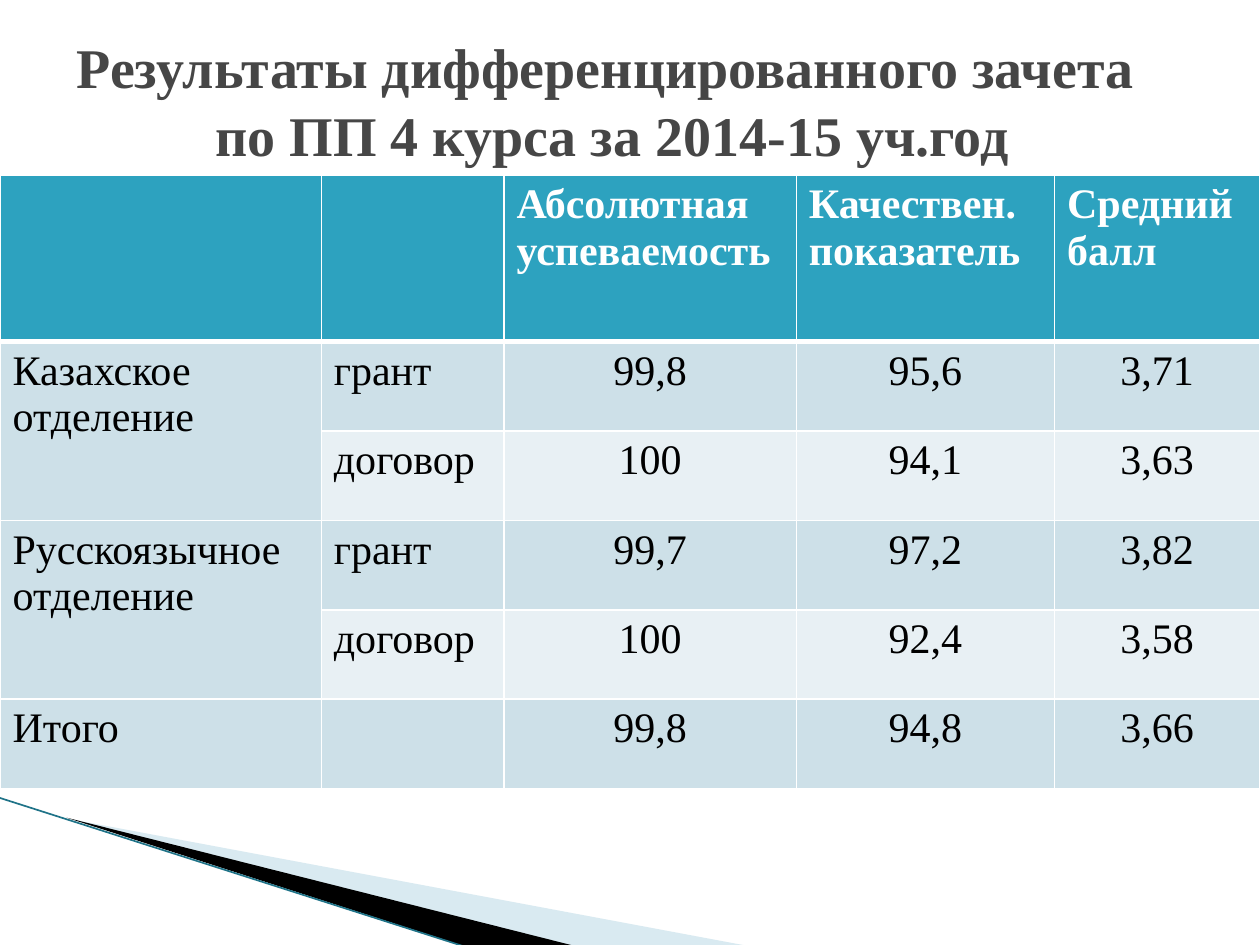
"""Build the slide with the results table of the graded fourth-year test."""
from lxml import etree
from pptx import Presentation
from pptx import util as u
from pptx.dml import color
from pptx.enum import text
from pptx.oxml import ns

FONT = "Times New Roman"
HEADER, DARK_BAND, LIGHT_BAND, WHITE = "2DA2BF", "CDE0E8", "E8F0F4", "FFFFFF"


def paint(target, value):
    """Give a fill a solid colour, or set a font's or a line's colour."""
    if hasattr(target, "solid"):
        target.solid()
        target = target.fore_color
    else:
        target = target.color
    target.rgb = color.RGBColor.from_string(value)


def add_child(parent, tag, **attributes):
    """Append a drawing element with the given attributes."""
    return etree.SubElement(parent, ns.qn(tag), attributes)


deck = Presentation()
deck.slide_width, deck.slide_height = u.Inches(10), u.Inches(7.5)
page = deck.slides.add_slide(deck.slide_layouts[5])
tree = page.shapes

wedges = [
    ("A0CBDC", 40, [(0.55, 6.5), (5.95, 7.51), (4.56, 7.51)]),
    ("000000", 100, [(0.53, 6.49), (4.57, 7.51), (3.72, 7.52)]),
]
for fill, opacity, corners in wedges:
    points = [(u.Inches(x), u.Inches(y)) for x, y in corners]
    builder = tree.build_freeform(*points[0])
    builder.add_line_segments(points[1:], close=True)
    wedge = builder.convert_to_shape()
    wedge.shadow.inherit = False
    wedge.line.fill.background()
    paint(wedge.fill, fill)
    if opacity < 100:
        tint = wedge._element.spPr.find(".//" + ns.qn("a:srgbClr"))
        add_child(tint, "a:alpha", val=str(opacity * 1000))

edge = tree.add_connector(1, u.Inches(-0.01), u.Inches(6.33), u.Inches(3.71), u.Inches(7.52))
paint(edge.line, "1F7388")
edge.line.width = u.Pt(0.95)
add_child(edge._element.spPr, "a:effectLst")

rows = [
    ["", "", "Абсолютная успеваемость", "Качествен. показатель", "Средний балл"],
    ["Казахское\nотделение", "грант", "99,8", "95,6", "3,71"],
    ["", "договор", "100", "94,1", "3,63"],
    ["Русскоязычное\nотделение", "грант", "99,7", "97,2", "3,82"],
    ["", "договор", "100", "92,4", "3,58"],
    ["Итого", "", "99,8", "94,8", "3,66"],
]
widths = [2.55, 1.45, 2.32, 2.05, 1.63]
heights = [1.32] + [0.71] * (len(rows) - 1)
table = tree.add_table(len(rows), len(widths), 0, u.Inches(1.39),
                       deck.slide_width, u.Inches(sum(heights))).table
for column, width in zip(table.columns, widths):
    column.width = u.Inches(width)
for row, height in zip(table.rows, heights):
    row.height = u.Inches(height)

for r, values in enumerate(rows):
    for c, value in enumerate(values):
        cell = table.cell(r, c)
        properties = cell._tc.get_or_add_tcPr()
        for side in "LRTB":
            heavy = (r, side) in [(0, "B"), (1, "T")]
            border = add_child(properties, "a:ln" + side, w=str(u.Pt(3 if heavy else 1)))
            add_child(add_child(border, "a:solidFill"), "a:srgbClr", val=WHITE)
        band = DARK_BAND if r % 2 or r == len(rows) - 1 else LIGHT_BAND
        paint(cell.fill, band if r else HEADER)
        cell.text_frame.text = value
        for para in cell.text_frame.paragraphs:
            para.alignment = text.PP_ALIGN.CENTER if r and c > 1 else text.PP_ALIGN.LEFT
            para.font.size = u.Pt(24)
            for span in para.runs:
                span.font.name, span.font.size, span.font.bold = FONT, u.Pt(24), r == 0
                paint(span.font, "000000" if r else WHITE)
for top in (1, 3):
    table.cell(top, 0).merge(table.cell(top + 1, 0))

title = tree.title
title.left, title.top, title.width, title.height = map(u.Inches, (0, 0.21, 9.72, 1.17))
title.text_frame.text = "Результаты дифференцированного зачета \vпо ПП 4 курса за 2014-15 уч.год"
title.text_frame.vertical_anchor = text.MSO_ANCHOR.MIDDLE
title.text_frame.auto_size = text.MSO_AUTO_SIZE.NONE
para = title.text_frame.paragraphs[0]
para.alignment = text.PP_ALIGN.CENTER
for span in para.runs:
    span.font.name, span.font.size, span.font.bold = FONT, u.Pt(32), True
    paint(span.font, "464646")
tree._spTree.append(title._element)

deck.save("out.pptx")
